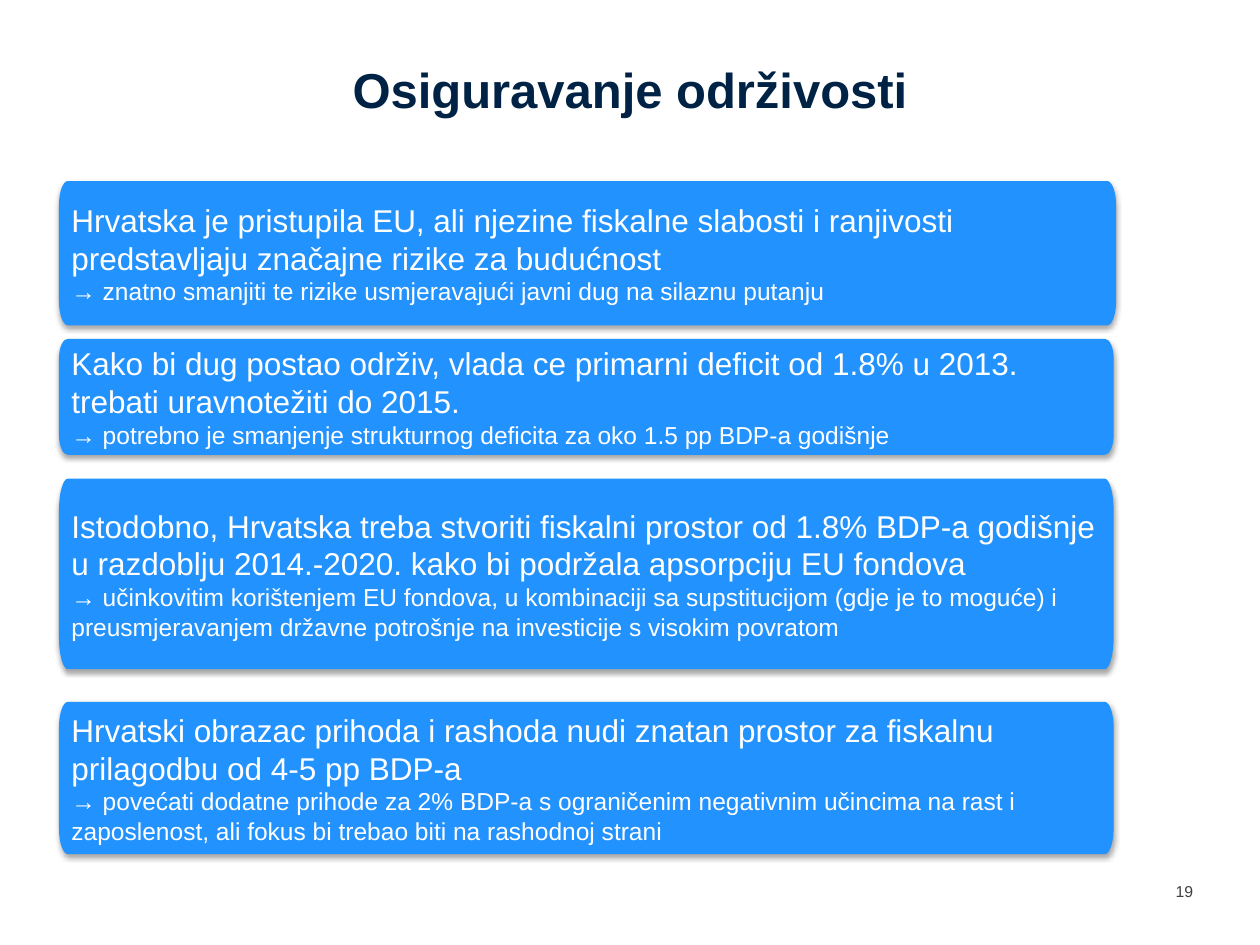
from lxml.etree import SubElement
from pptx import Presentation
from pptx.dml.color import RGBColor
from pptx.enum.text import MSO_ANCHOR as Anchor, PP_ALIGN as Align
from pptx.oxml.ns import qn
from pptx.util import Cm, Pt

NAVY = RGBColor(0x00, 0x23, 0x45)
BLUE = RGBColor(0x22, 0x92, 0xFF)
WHITE = RGBColor(0xFF, 0xFF, 0xFF)
GREY = RGBColor(0x40, 0x40, 0x40)

LEFT, WIDTH = 1.19, 21.26
# top, height, width, statement, consequence
PANELS = [
    (3.65, 2.91, 21.31,
     "Hrvatska je pristupila EU, ali njezine fiskalne slabosti i ranjivosti "
     "predstavljaju značajne rizike za budućnost",
     "→ znatno smanjiti te rizike usmjeravajući javni dug na silaznu putanju"),
    (6.83, 2.34, WIDTH,
     "Kako bi dug postao održiv, vlada ce primarni deficit od 1.8% u 2013. "
     "trebati uravnotežiti do 2015.",
     "→ potrebno je smanjenje strukturnog deficita za oko 1.5 pp BDP-a godišnje"),
    (9.65, 3.84, WIDTH,
     "Istodobno, Hrvatska treba stvoriti fiskalni prostor od 1.8% BDP-a godišnje "
     "u razdoblju 2014.-2020. kako bi podržala apsorpciju EU fondova",
     "→ učinkovitim korištenjem EU fondova, u kombinaciji sa supstitucijom (gdje je "
     "to moguće) i preusmjeravanjem državne potrošnje na investicije s visokim povratom"),
    (14.15, 3.07, WIDTH,
     "Hrvatski obrazac prihoda i rashoda nudi znatan prostor za fiskalnu "
     "prilagodbu od 4-5 pp BDP-a",
     "→ povećati dodatne prihode za 2% BDP-a s ograničenim negativnim učincima na "
     "rast i zaposlenost, ali fokus bi trebao biti na rashodnoj strani"),
]


def write(p, text, size, color, bold=False, align=Align.LEFT):
    p.alignment = align
    r = p.add_run()
    r.text = text
    r.font.name = "Arial"
    r.font.size = Pt(size)
    r.font.bold = bold
    r.font.color.rgb = color


def set_frame(tf, anchor, margins):
    """Margins are left, top, right, bottom in centimetres."""
    tf.word_wrap = True
    tf.vertical_anchor = anchor
    (tf.margin_left, tf.margin_top,
     tf.margin_right, tf.margin_bottom) = map(Cm, margins)


def cut_corners(x, y, w, h, rx, ry):
    """Eight points of a rectangle with its corners cut, clockwise from the left side."""
    x2, y2 = x + w, y + h
    points = [(x, y + ry), (x + rx, y), (x2 - rx, y), (x2, y + ry),
              (x2, y2 - ry), (x2 - rx, y2), (x + rx, y2), (x, y2 - ry)]
    return [(Cm(px), Cm(py)) for px, py in points]


def round_corners(sp):
    """Turn every second segment of a cut-corner outline into a quarter ellipse."""
    bend = 0.55
    outline = next(sp._element.iter(qn("a:path")))
    nodes = [n for n in outline if n.tag != qn("a:close")]
    spots = [(int(n[0].get("x")), int(n[0].get("y"))) for n in nodes]
    for i in range(1, len(nodes), 2):
        start, end = spots[i - 1], spots[i]
        corner = (start[0], end[1]) if i % 4 == 1 else (end[0], start[1])
        handles = [tuple(round(a + bend * (c - a)) for a, c in zip(spot, corner))
                   for spot in (start, end)]
        nodes[i].clear()
        nodes[i].tag = qn("a:cubicBezTo")
        for px, py in (*handles, end):
            SubElement(nodes[i], qn("a:pt"), x=str(px), y=str(py))


class Deck:
    corner_width = 0.18

    def __init__(self, slide):
        self.s = slide

    def label(self, x, y, w, h, text, anchor=Anchor.TOP, margins=(0, 0, 0, 0), **style):
        tf = self.s.shapes.add_textbox(Cm(x), Cm(y), Cm(w), Cm(h)).text_frame
        set_frame(tf, anchor, margins)
        write(tf.paragraphs[0], text, **style)

    def panel(self, y, h, w, statement, consequence):
        points = cut_corners(LEFT, y, w, h, self.corner_width, h / 6)
        builder = self.s.shapes.build_freeform(*points[0])
        builder.add_line_segments(points[1:], close=True)
        sp = builder.convert_to_shape()
        round_corners(sp)
        sp.fill.solid()
        sp.fill.fore_color.rgb = BLUE
        sp.line.fill.background()
        self.drop_shadow(sp)
        tf = sp.text_frame
        set_frame(tf, Anchor.MIDDLE, [0.25] * 4)
        write(tf.paragraphs[0], statement, 18, WHITE)
        write(tf.add_paragraph(), consequence, 14, WHITE)

    def drop_shadow(self, sp):
        sp.shadow.inherit = False
        effects = sp._element.spPr.find(qn("a:effectLst"))
        shadow = SubElement(effects, qn("a:outerShdw"), blurRad=str(Pt(3.1)),
                            dist=str(Pt(1.8)), dir="5400000", rotWithShape="0")
        color = SubElement(shadow, qn("a:srgbClr"), val="000000")
        SubElement(color, qn("a:alpha"), val="35000")


def main():
    prs = Presentation()
    prs.slide_width, prs.slide_height = Cm(25.4), Cm(19.05)
    deck = Deck(prs.slides.add_slide(prs.slide_layouts[6]))
    deck.label(1.27, 0.79, 22.86, 1.65, "Osiguravanje održivosti",
               anchor=Anchor.BOTTOM, margins=(0, 0, 0, 0.05),
               size=28, color=NAVY, bold=True, align=Align.CENTER)
    for panel in PANELS:
        deck.panel(*panel)
    deck.label(23.7, 17.68, 0.79, 0.61, "19", margins=(0, 0.1, 0, 0),
               size=9, color=GREY)
    prs.save("out.pptx")


if __name__ == "__main__":
    main()
